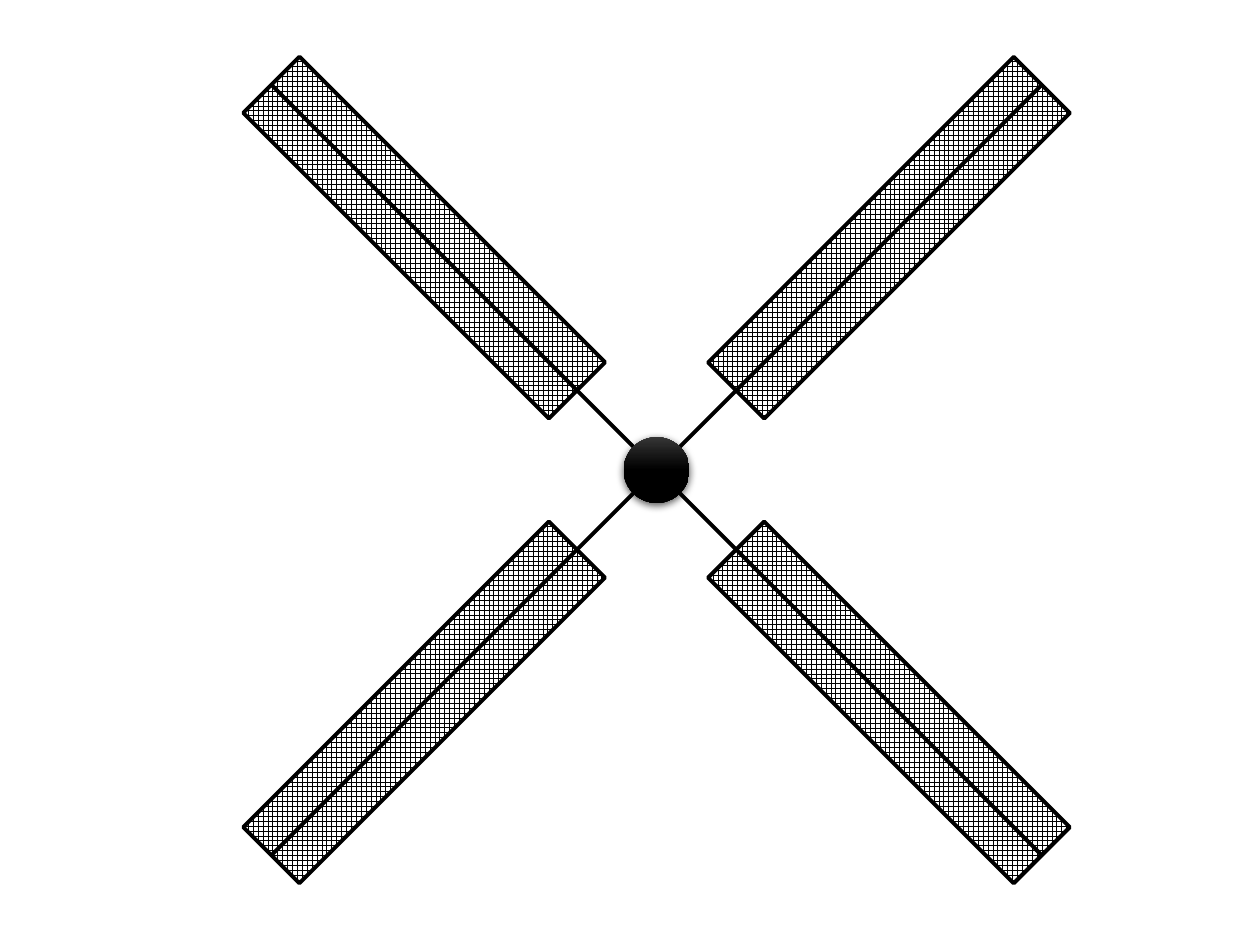
from dataclasses import dataclass
from math import sqrt

from lxml.etree import SubElement
from pptx import Presentation
from pptx.dml.color import RGBColor
from pptx.enum.dml import MSO_PATTERN
from pptx.enum.shapes import MSO_CONNECTOR, MSO_SHAPE
from pptx.oxml.ns import qn
from pptx.shapes.group import GroupShape
from pptx.util import Pt

COLOURS = {"ink": "000000", "paper": "FFFFFF", "sheen": "4B4B4B"}
HUB_X, HUB_Y = 375.2, 268.6
HUB_SIZE = 37.6
BLADE_WIDTH, BLADE_LENGTH = 45.4, 247
BLADE_OFFSET = 132.8
TIP_OFFSET = BLADE_OFFSET + BLADE_LENGTH / 2 / sqrt(2)
BOTTOM_SIDE = 2
SHADOW = {"blurRad": Pt(4.5), "dist": Pt(1.5), "dir": 90 * 60000, "rotWithShape": 0}


@dataclass(frozen=True)
class Sail:
    """A blade and its spar; across and down are the signs of its direction."""
    across: int
    down: int
    rotation: int


SAILS = [Sail(-1, 1, 45), Sail(1, -1, 225), Sail(-1, -1, 135), Sail(1, 1, 315)]


def colour(name: str) -> RGBColor:
    return RGBColor.from_string(COLOURS[name])


def style_outline(part) -> None:
    part.line.width = Pt(2.25)
    part.line.color.rgb = colour("ink")


def add_sail(windmill: GroupShape, sail: Sail) -> None:
    blade = windmill.shapes.add_shape(
        MSO_SHAPE.RECTANGLE,
        Pt(HUB_X + sail.across * BLADE_OFFSET - BLADE_WIDTH / 2),
        Pt(HUB_Y + sail.down * BLADE_OFFSET - BLADE_LENGTH / 2),
        Pt(BLADE_WIDTH), Pt(BLADE_LENGTH))
    blade.rotation = sail.rotation
    blade.shadow.inherit = False
    blade.fill.patterned()
    blade.fill.pattern = MSO_PATTERN.LARGE_GRID
    blade.fill.fore_color.rgb = colour("ink")
    blade.fill.back_color.rgb = colour("paper")
    style_outline(blade)

    tip = {"begin_x": Pt(HUB_X + sail.across * TIP_OFFSET),
           "begin_y": Pt(HUB_Y + sail.down * TIP_OFFSET)}
    spar = windmill.shapes.add_connector(
        MSO_CONNECTOR.STRAIGHT, *tip.values(), Pt(HUB_X), Pt(HUB_Y))
    spar.begin_connect(blade, BOTTOM_SIDE)
    # Joining ignores the blade's rotation, so the tip is set again.
    for attribute, value in tip.items():
        setattr(spar, attribute, value)
    style_outline(spar)
    SubElement(spar._element.spPr, qn("a:effectLst"))


def add_hub(windmill: GroupShape) -> None:
    hub = windmill.shapes.add_shape(
        MSO_SHAPE.OVAL, Pt(HUB_X - HUB_SIZE / 2), Pt(HUB_Y - HUB_SIZE / 2),
        Pt(HUB_SIZE), Pt(HUB_SIZE))
    hub.rotation = 45
    hub.fill.gradient()
    hub.fill.gradient_angle = 270
    for stop, (position, name) in zip(hub.fill.gradient_stops,
                                      [(0, "sheen"), (0.5, "ink")]):
        stop.position = position
        stop.color.rgb = colour(name)
    properties = hub._element.spPr
    properties.find(qn("a:gradFill")).set("rotWithShape", "0")
    hub.line.fill.background()

    hub.shadow.inherit = False
    shadow = SubElement(properties.find(qn("a:effectLst")), qn("a:outerShdw"))
    for attribute, value in SHADOW.items():
        shadow.set(attribute, str(value))
    tint = SubElement(shadow, qn("a:srgbClr"), val=COLOURS["ink"])
    SubElement(tint, qn("a:alpha"), val="63000")


def main() -> None:
    deck = Presentation()
    deck.slide_width, deck.slide_height = Pt(720), Pt(540)
    slide = deck.slides.add_slide(deck.slide_layouts[6])
    windmill = slide.shapes.add_group_shape()
    for sail in SAILS:
        add_sail(windmill, sail)
    add_hub(windmill)
    deck.save("out.pptx")


if __name__ == "__main__":
    main()
